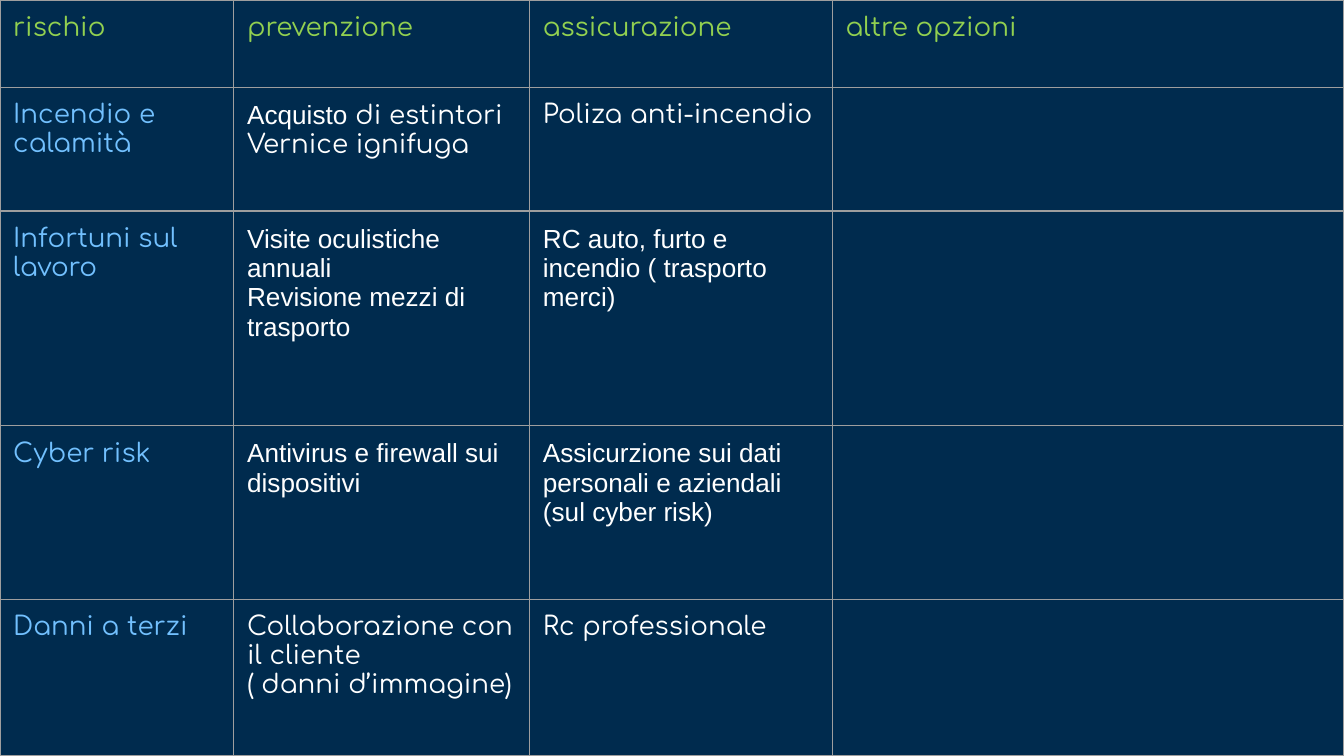
from lxml import etree
from pptx import Presentation
from pptx import util as u
from pptx.dml.color import RGBColor
from pptx.oxml import ns

NAVY, GREEN, BLUE, WHITE, GREY = "002B4E", "92D050", "72C0FE", "FFFFFF", "9E9E9E"
ROUND, PLAIN = "Comfortaa", "Arial"

COLUMN_WIDTHS = [4.42, 5.59, 5.72, 9.67]
ROW_HEIGHTS = [1.65, 2.34, 4.06, 3.28, 2.95]
HEADINGS = ["rischio", "prevenzione", "assicurazione", "altre opzioni"]

# Each cell is a list of paragraphs, each paragraph a list of (text, font) runs.
RISKS = [
    ("Incendio e calamità",
     [[("Acquisto", PLAIN), (" di estintori", ROUND)], [("Vernice ignifuga", ROUND)]],
     [[("Poliza anti-incendio", ROUND)]]),
    ("Infortuni sul lavoro",
     [[("Visite oculistiche annuali", PLAIN)], [("Revisione mezzi di trasporto", PLAIN)]],
     [[("RC auto, furto e incendio ( trasporto merci)", PLAIN)]]),
    ("Cyber risk",
     [[("Antivirus e firewall sui dispositivi", PLAIN)]],
     [[("Assicurzione sui dati personali e aziendali (sul cyber risk)", PLAIN)]]),
    ("Danni a terzi",
     [[("Collaborazione con il cliente", ROUND)], [("( danni d’immagine)", ROUND)]],
     [[("Rc professionale", ROUND)]]),
]


def rgb(color):
    return RGBColor.from_string(color)


class Deck:
    """Table style together with the slide being built."""
    size = u.Pt(14)
    margin = u.Cm(0.25)
    border = u.Pt(0.75)

    def __init__(self, width, height):
        self.prs = Presentation()
        self.prs.slide_width, self.prs.slide_height = u.Cm(width), u.Cm(height)
        self.s = self.prs.slides.add_slide(self.prs.slide_layouts[6])

    def background(self, color):
        fill = self.s.background.fill
        fill.solid()
        fill.fore_color.rgb = rgb(color)

    def table(self, widths, heights):
        size = u.Cm(sum(widths)), u.Cm(sum(heights))
        tbl = self.s.shapes.add_table(len(heights), len(widths), 0, 0, *size).table
        tbl.first_row = tbl.horz_banding = False
        for column, width in zip(tbl.columns, widths):
            column.width = u.Cm(width)
        for row, height in zip(tbl.rows, heights):
            row.height = u.Cm(height)
        for cell in tbl.iter_cells():
            self.cell_style(cell)
        return tbl

    def cell_style(self, cell):
        cell.margin_left = cell.margin_right = self.margin
        cell.margin_top = cell.margin_bottom = self.margin
        pr = cell._tc.get_or_add_tcPr()
        for side in ("lnL", "lnR", "lnT", "lnB"):
            ln = etree.SubElement(pr, ns.qn(f"a:{side}"), w=str(int(self.border)))
            fill = etree.SubElement(ln, ns.qn("a:solidFill"))
            etree.SubElement(fill, ns.qn("a:srgbClr"), val=GREY)
        cell.fill.background()

    def cell_text(self, cell, paragraphs, color):
        tf = cell.text_frame
        for i, runs in enumerate(paragraphs):
            p = tf.add_paragraph() if i else tf.paragraphs[0]
            for text, font in runs:
                r = p.add_run()
                r.text = text
                r.font.name, r.font.size = font, self.size
                r.font.color.rgb = rgb(color)


def main():
    deck = Deck(25.4, 14.29)
    deck.background(NAVY)
    tbl = deck.table(COLUMN_WIDTHS, ROW_HEIGHTS)
    for col, heading in enumerate(HEADINGS):
        deck.cell_text(tbl.cell(0, col), [[(heading, ROUND)]], GREEN)
    for row, (risk, *measures) in enumerate(RISKS, start=1):
        deck.cell_text(tbl.cell(row, 0), [[(risk, ROUND)]], BLUE)
        for col, paragraphs in enumerate(measures, start=1):
            deck.cell_text(tbl.cell(row, col), paragraphs, WHITE)
    deck.prs.save("out.pptx")


if __name__ == "__main__":
    main()
